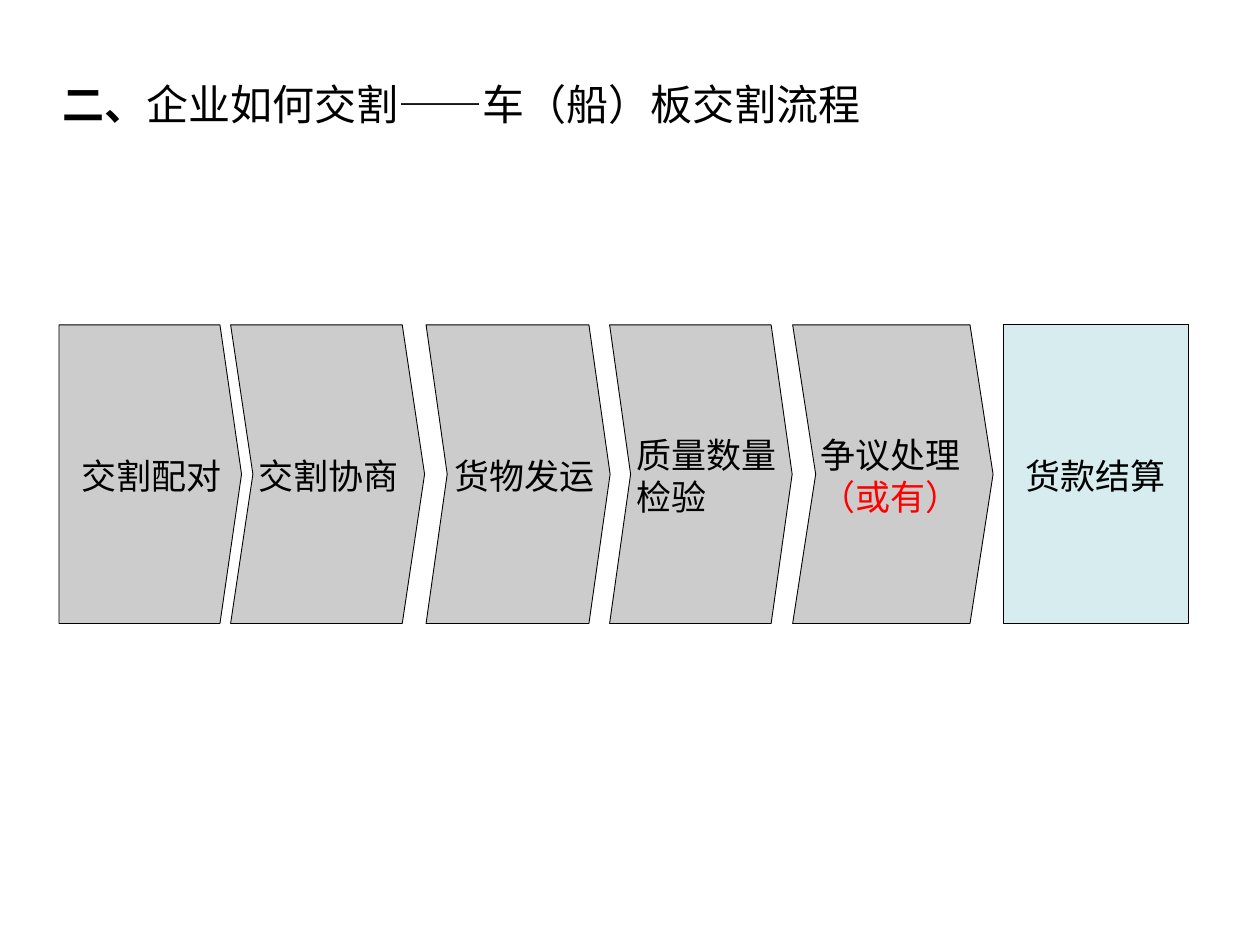
from dataclasses import dataclass

from pptx import Presentation
from pptx.dml.color import RGBColor
from pptx.enum.shapes import MSO_SHAPE
from pptx.enum.text import MSO_ANCHOR, MSO_AUTO_SIZE, PP_ALIGN
from pptx.util import Cm, Pt

PENTAGON, CHEVRON, RECTANGLE = (
    MSO_SHAPE.PENTAGON, MSO_SHAPE.CHEVRON, MSO_SHAPE.RECTANGLE)
MIDDLE, LEFT, NO_FIT = MSO_ANCHOR.MIDDLE, PP_ALIGN.LEFT, MSO_AUTO_SIZE.NONE
TITLE_ONLY = 5


@dataclass(frozen=True)
class Theme:
    ink: RGBColor = RGBColor(0x00, 0x00, 0x00)
    accent: RGBColor = RGBColor(0xFF, 0x00, 0x00)
    step: RGBColor = RGBColor(0xCC, 0xCC, 0xCC)
    final: RGBColor = RGBColor(0xD6, 0xEC, 0xEE)
    title_font: str = "Noto Sans CJK SC"
    label_font: str = "Arial"
    title_size: Pt = Pt(24)
    label_size: Pt = Pt(20)
    outline: Pt = Pt(0.5)


# All steps share one band, in centimetres
BAND_TOP, BAND_HEIGHT = 6.55, 6.02
LABEL_WIDTH, LINE_HEIGHT, LABEL_MIDDLE = 2.95, 0.86, 9.58

# Outline, left, width, label left, label lines, label, optional remark
STEPS = [
    (PENTAGON, 1.19, 3.68, 1.65, 1, "交割配对", ""),
    (CHEVRON, 4.65, 3.91, 5.21, 1, "交割协商", ""),
    (CHEVRON, 8.59, 3.71, 9.17, 1, "货物发运", ""),
    (CHEVRON, 12.29, 3.68, 12.83, 2, "质量数量检验", ""),
    (CHEVRON, 15.98, 4.04, 16.54, 2, "争议处理", "（或有）"),
    (RECTANGLE, 20.22, 3.73, 20.68, 1, "货款结算", ""),
]
POINT_DEPTH = {PENTAGON: 0.118, CHEVRON: 0.115}


class FlowSlide:
    def __init__(self, page, theme):
        self.page, self.theme = page, theme

    def style(self, para, font, size):
        para.alignment = LEFT
        para.font.name, para.font.size = font, size
        para.font.color.rgb = self.theme.ink

    def title(self, number, wording):
        box = self.page.shapes.title
        box.left, box.top, box.width, box.height = Cm(1), Cm(1), Cm(22.86), Cm(2.18)
        frame = box.text_frame
        frame.auto_size, frame.vertical_anchor = NO_FIT, MIDDLE
        para = frame.paragraphs[0]
        self.style(para, self.theme.title_font, self.theme.title_size)
        for text, bold in ((number, True), (wording, False)):
            span = para.add_run()
            span.text, span.font.bold = text, bold

    def step(self, kind, left, width):
        shape = self.page.shapes.add_shape(
            kind, Cm(left), Cm(BAND_TOP), Cm(width), Cm(BAND_HEIGHT))
        shape.shadow.inherit = False
        shape.fill.solid()
        shape.fill.fore_color.rgb = (
            self.theme.final if kind == RECTANGLE else self.theme.step)
        shape.line.color.rgb = self.theme.ink
        shape.line.width = self.theme.outline
        if kind in POINT_DEPTH:
            shape.adjustments[0] = POINT_DEPTH[kind]

    def label(self, left, lines, wording, remark):
        height = lines * LINE_HEIGHT
        box = self.page.shapes.add_textbox(
            Cm(left), Cm(LABEL_MIDDLE - height / 2), Cm(LABEL_WIDTH), Cm(height))
        frame = box.text_frame
        frame.word_wrap, frame.vertical_anchor = True, MIDDLE
        frame.margin_left = frame.margin_right = 0
        frame.margin_top = frame.margin_bottom = 0
        para = frame.paragraphs[0]
        self.style(para, self.theme.label_font, self.theme.label_size)
        para.add_run().text = wording
        if remark:
            span = para.add_run()
            span.text = remark
            span.font.color.rgb = self.theme.accent


def main():
    deck = Presentation()
    deck.slide_width, deck.slide_height = Cm(25.4), Cm(19.05)
    page = deck.slides.add_slide(deck.slide_layouts[TITLE_ONLY])
    slide = FlowSlide(page, Theme())

    # Heading
    slide.title("二、", "企业如何交割——车（船）板交割流程")

    # Delivery process, from pairing to settlement
    for kind, left, width, label_left, lines, wording, remark in STEPS:
        slide.step(kind, left, width)
        slide.label(label_left, lines, wording, remark)

    deck.save("out.pptx")


if __name__ == "__main__":
    main()
